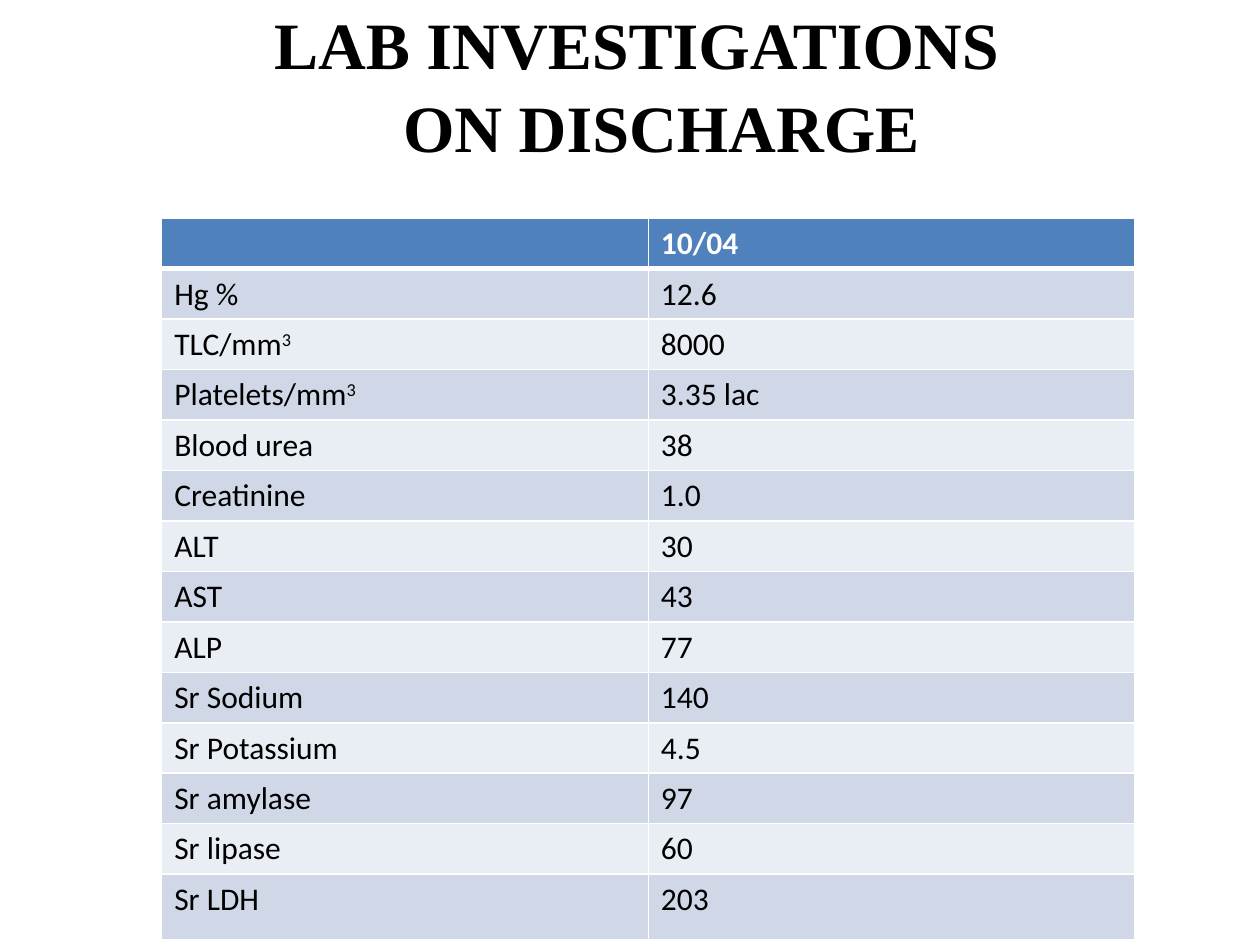
import pptx
import pptx.dml.color
import pptx.enum.text
import pptx.oxml.ns
import pptx.util
from lxml import etree

Cm = pptx.util.Cm
Pt = pptx.util.Pt

COLORS = {
    "title": "000000",
    "body": "000000",
    "header_text": "FFFFFF",
    "header": "4F81BD",
    "band_dark": "D0D8E8",
    "band_light": "E9EDF4",
    "border": "FFFFFF",
}

HEADER = ("", "10/04")
# A caret marks the start of superscript text.
RESULTS = [
    ("Hg %", "12.6"),
    ("TLC/mm^3", "8000"),
    ("Platelets/mm^3", "3.35 lac"),
    ("Blood urea", "38"),
    ("Creatinine", "1.0"),
    ("ALT", "30"),
    ("AST", "43"),
    ("ALP", "77"),
    ("Sr Sodium", "140"),
    ("Sr Potassium", "4.5"),
    ("Sr amylase", "97"),
    ("Sr lipase", "60"),
    ("Sr LDH", "203"),
]


def rgb(name):
    return pptx.dml.color.RGBColor.from_string(COLORS[name])


def write_text(paragraph, text, *, size, font, color, bold=False,
               align=pptx.enum.text.PP_ALIGN.LEFT, indent=0, space_before=0):
    """Fill a paragraph; text after a caret becomes superscript."""
    paragraph.alignment = align
    paragraph.space_before = Pt(space_before)
    if indent:
        paragraph._p.get_or_add_pPr().set("marL", str(Cm(indent)))
    paragraph.font.size = Pt(size)
    for index, part in enumerate(text.split("^")):
        if not part:
            continue
        run = paragraph.add_run()
        run.text = part
        run.font.size = Pt(size)
        run.font.name = font
        run.font.bold = bold
        run.font.color.rgb = rgb(color)
        if index:
            run._r.get_or_add_rPr().set("baseline", "30000")


def set_borders(cell, color, **widths):
    """Draw cell borders, given in points for L, R, T and B in that order."""
    properties = cell._tc.get_or_add_tcPr()
    qn = pptx.oxml.ns.qn
    for side, width in widths.items():
        line = etree.SubElement(properties, qn(f"a:ln{side}"), w=str(Pt(width)))
        fill = etree.SubElement(line, qn("a:solidFill"))
        etree.SubElement(fill, qn("a:srgbClr"), val=COLORS[color])


def add_title(slide, left, top, width, height):
    frame = slide.shapes.add_textbox(Cm(left), Cm(top), Cm(width), Cm(height)).text_frame
    frame.word_wrap = True
    frame.vertical_anchor = pptx.enum.text.MSO_ANCHOR.MIDDLE
    style = {"size": 37.8, "font": "Times New Roman", "color": "title", "bold": True,
             "align": pptx.enum.text.PP_ALIGN.CENTER}
    write_text(frame.paragraphs[0], "LAB INVESTIGATIONS", **style)
    write_text(frame.add_paragraph(), "ON DISCHARGE", indent=1, space_before=2, **style)


def add_results_table(slide, left, top, width, row_height, last_row_height):
    rows = [HEADER, *RESULTS]
    height = row_height * (len(rows) - 1) + last_row_height
    table = slide.shapes.add_table(len(rows), len(HEADER), Cm(left), Cm(top),
                                   Cm(width), Cm(height)).table
    for column in table.columns:
        column.width = Cm(width / len(HEADER))
    for row in table.rows:
        row.height = Cm(row_height)
    table.rows[len(rows) - 1].height = Cm(last_row_height)

    for row_index, values in enumerate(rows):
        is_header = row_index == 0
        if is_header:
            fill = "header"
        else:
            fill = "band_dark" if row_index % 2 else "band_light"
        for column_index, value in enumerate(values):
            cell = table.cell(row_index, column_index)
            set_borders(cell, "border", L=1, R=1, T=3 if row_index == 1 else 1,
                        B=3 if is_header else 1)
            cell.fill.solid()
            cell.fill.fore_color.rgb = rgb(fill)
            write_text(cell.text_frame.paragraphs[0], value, size=18, font="Calibri",
                       color="header_text" if is_header else "body", bold=is_header)


def main():
    presentation = pptx.Presentation()
    presentation.slide_width = Cm(25.4)
    presentation.slide_height = Cm(19.05)
    slide = presentation.slides.add_slide(presentation.slide_layouts[6])
    add_title(slide, left=0.64, top=0.2, width=24.38, height=3.02)
    add_results_table(slide, left=3.26, top=4.4, width=19.62,
                      row_height=1, last_row_height=1.32)
    presentation.save("out.pptx")


if __name__ == "__main__":
    main()
